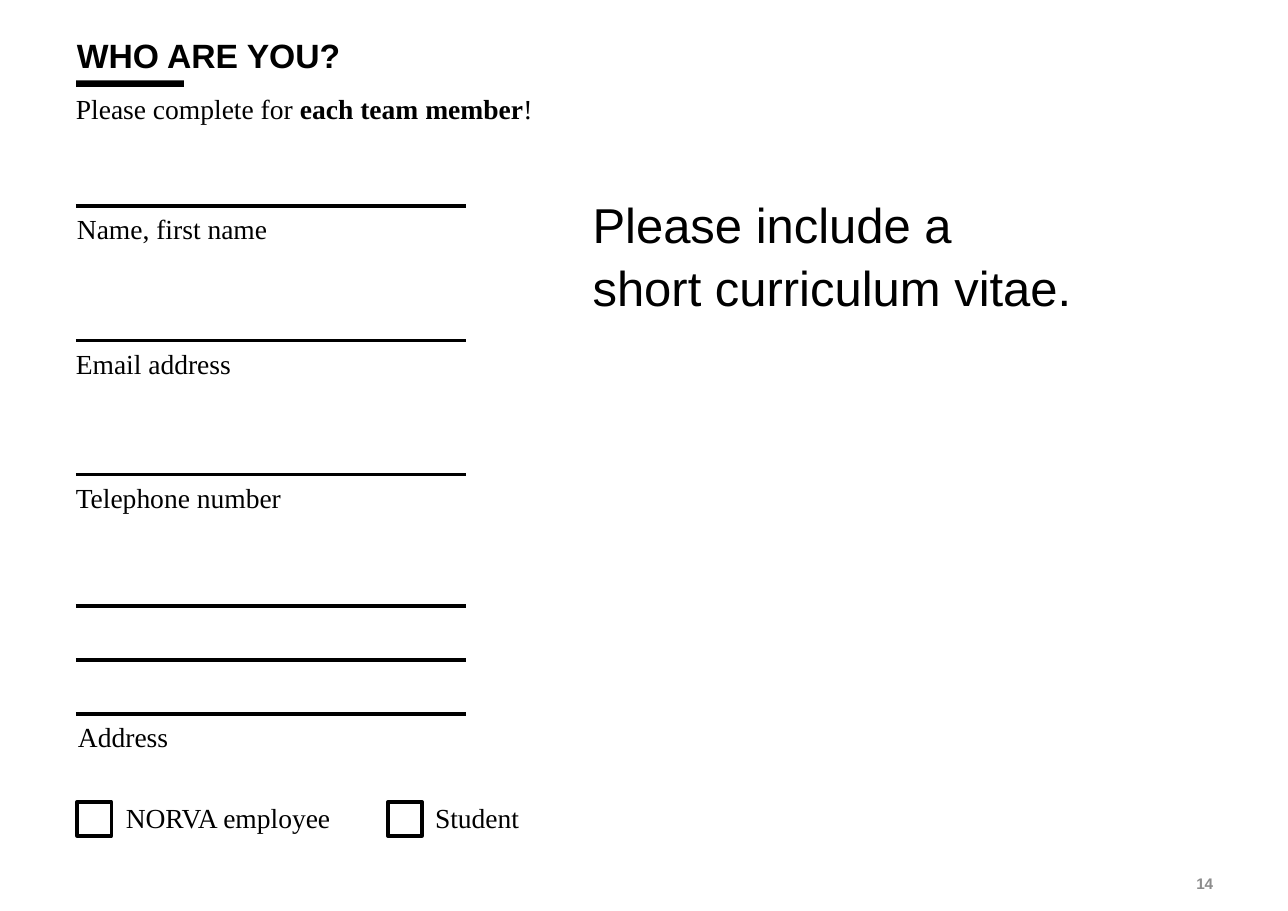
from pptx import Presentation
from pptx import util as u
from pptx.dml.color import RGBColor
from pptx.enum import shapes, text
from pptx.oxml.ns import qn
from lxml import etree

# Content
TITLE = [("WHO ARE YOU?", True)]
REQUEST = [("Please complete for ", False), ("each team member", True), ("!", False)]
FIELDS = [  # label, left, heights of its writing lines
    ("Name, first name", 0.6, [1.87]),
    ("Email address", 0.59, [3.09]),
    ("Telephone number", 0.59, [4.31]),
    ("Address", 0.61, [5.5, 5.99, 6.48]),
]
CHOICES = [  # label, left, width, alignment, left of tick box
    ("NORVA employee", 0.94, 2.26, text.PP_ALIGN.CENTER, 0.7),
    ("Student", 3.79, 1.02, text.PP_ALIGN.RIGHT, 3.52),
]
CV_NOTE = "Please include a short curriculum vitae."
PAGE_NUMBER = "14"

SANS, SERIF = "Arial", "Times New Roman"
BLACK, GREY = "000000", "8C8C8C"
LINE_LEFT, LINE_RIGHT, LINE_WEIGHT = 0.69, 4.23, 2.25
LABEL_WIDTH, LABEL_HEIGHT = 2.07, 0.41
CHOICE_TOP, TICK_TOP, TICK_SIZE = 7.22, 7.28, 0.31

prs = Presentation()
prs.slide_width, prs.slide_height = u.Inches(11.69), u.Inches(8.27)
slide = prs.slides.add_slide(prs.slide_layouts[6])


def color(hex_code):
    return RGBColor.from_string(hex_code)


def add_text(runs, box, size, font=SERIF, ink=BLACK, align=text.PP_ALIGN.LEFT,
             anchor=text.MSO_ANCHOR.TOP, spacing=None):
    frame = slide.shapes.add_textbox(*map(u.Inches, box)).text_frame
    frame.word_wrap = True
    frame.vertical_anchor = anchor
    paragraph = frame.paragraphs[0]
    paragraph.alignment = align
    paragraph.line_spacing = spacing
    for words, bold in runs:
        run = paragraph.add_run()
        run.text = words
        run.font.name, run.font.size, run.font.bold = font, u.Pt(size), bold
        run.font.color.rgb = color(ink)


def add_label(words, left, top, width=LABEL_WIDTH, align=text.PP_ALIGN.LEFT):
    add_text([(words, False)], (left, top, width, LABEL_HEIGHT), 18,
             align=align, anchor=text.MSO_ANCHOR.MIDDLE)


def add_rectangle(box):
    rectangle = slide.shapes.add_shape(shapes.MSO_SHAPE.RECTANGLE, *map(u.Inches, box))
    rectangle.shadow.inherit = False
    return rectangle


def add_writing_line(y):
    line = slide.shapes.add_connector(
        shapes.MSO_CONNECTOR.STRAIGHT,
        *map(u.Inches, (LINE_LEFT, y, LINE_RIGHT, y)))
    line.line.color.rgb = color(BLACK)
    line.line.width = u.Pt(LINE_WEIGHT)
    etree.SubElement(line._element.spPr, qn("a:effectLst"))


# Heading with its bar
title_bar = add_rectangle((0.69, 0.73, 0.98, 0.06))
title_bar.fill.solid()
title_bar.fill.fore_color.rgb = color(BLACK)
title_bar.line.fill.background()
add_text(TITLE, (0.6, 0.31, 7.71, 0.31), 22, SANS, spacing=0.9)
add_text(REQUEST, (0.59, 0.82, 7.71, 0.31), 18, spacing=0.9)

# Form fields: each label hangs under its last line
for label, left, lines in FIELDS:
    add_label(label, left, lines[-1])
    for y in lines:
        add_writing_line(y)

# Tick boxes
for label, left, width, align, tick_left in CHOICES:
    add_label(label, left, CHOICE_TOP, width, align)
    tick = add_rectangle((tick_left, TICK_TOP, TICK_SIZE, TICK_SIZE))
    tick.fill.background()
    tick.line.color.rgb = color(BLACK)
    tick.line.width = u.Pt(LINE_WEIGHT)

# Curriculum vitae note and page number
add_text([(CV_NOTE, False)], (5.28, 1.68, 4.56, 2.39), 32, SANS, spacing=1.07)
add_text([(PAGE_NUMBER, True)], (8.88, 7.84, 2.23, 0.35), 10, SANS, GREY,
         text.PP_ALIGN.RIGHT, text.MSO_ANCHOR.MIDDLE)

prs.save("out.pptx")
